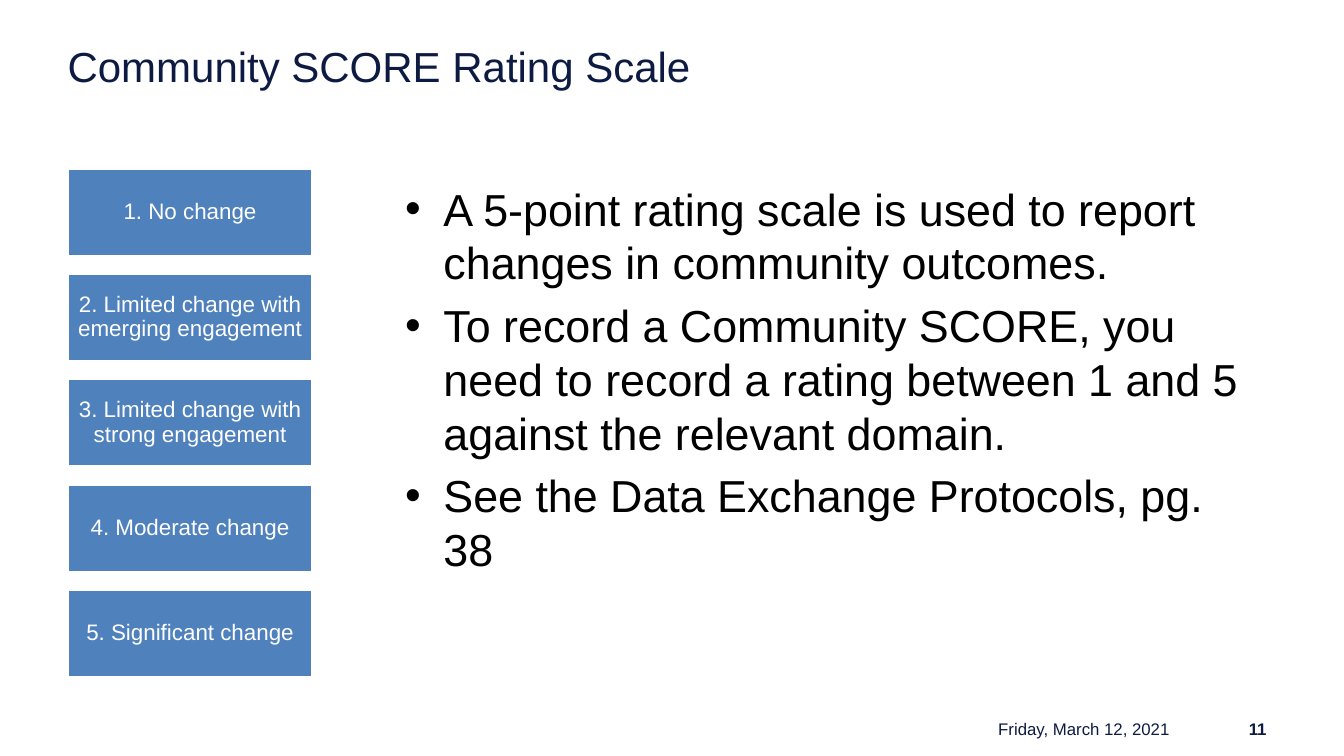
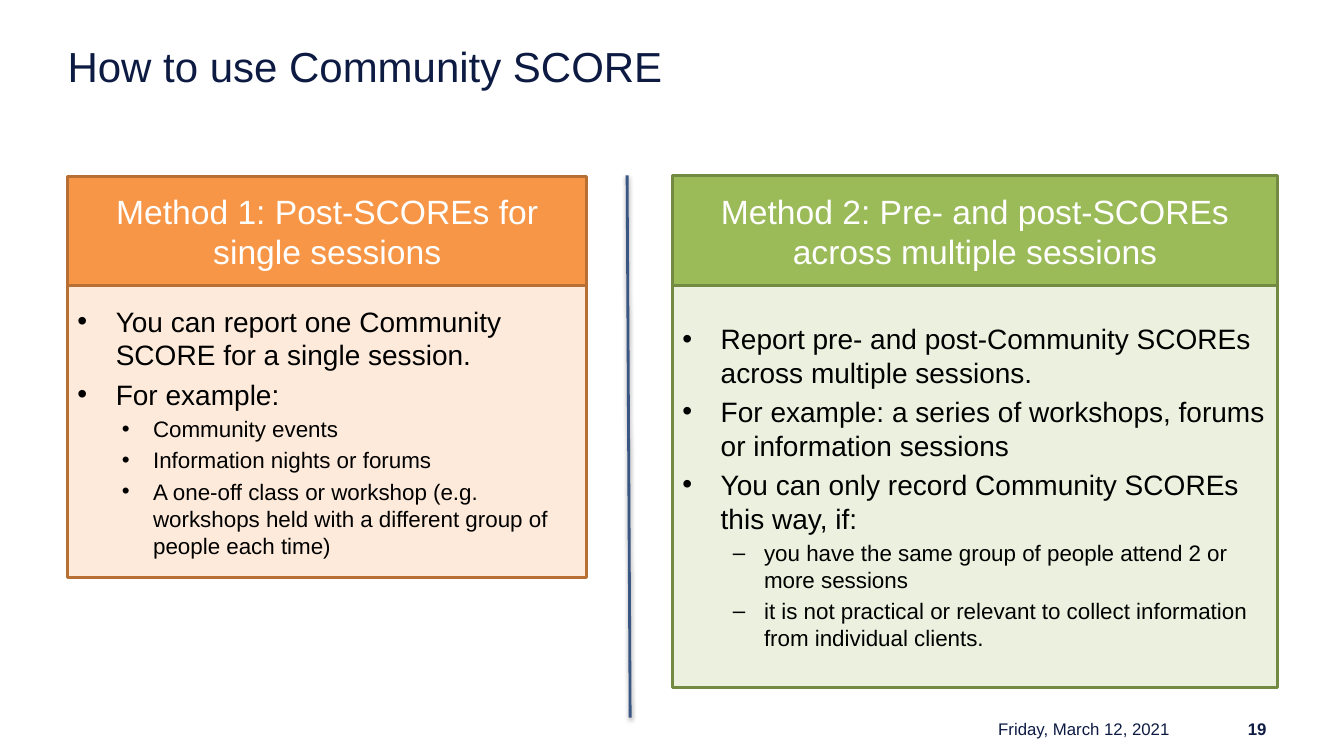
"""Build two slides on the Community SCORE rating scale and its use."""
from dataclasses import dataclass

import lxml.etree
import pptx
import pptx.dml.color
import pptx.enum.shapes
import pptx.enum.text
import pptx.oxml.ns
import pptx.util

Inches = pptx.util.Inches
Pt = pptx.util.Pt
ALIGN = pptx.enum.text.PP_ALIGN
ANCHOR = pptx.enum.text.MSO_ANCHOR

FONT = "Arial"
NAVY = "0D1B43"
WHITE = "FFFFFF"
BLACK = "000000"
BLUE = "4F81BD"
DIVIDER_BLUE = "3A5683"

MARGIN = 0.67
FOOTER_TOP = 7.12
FOOTER_HEIGHT = 0.23
DATE = "Friday, March 12, 2021"

RATINGS = (
    "1. No change",
    "2. Limited change with emerging engagement",
    "3. Limited change with strong engagement",
    "4. Moderate change",
    "5. Significant change",
)
RATING_TOP, RATING_BOTTOM, RATING_HEIGHT = 1.67, 6.72, 0.87


@dataclass(frozen=True)
class Box:
    left: float
    top: float
    width: float
    height: float


@dataclass(frozen=True)
class Style:
    size: float
    color: str
    bold: bool = False
    align: ALIGN = ALIGN.LEFT
    anchor: ANCHOR = ANCHOR.TOP
    inset_x: float = 0.1
    inset_y: float = 0.05
    line_spacing: float = 1.0


@dataclass(frozen=True)
class Bullet:
    text: str
    size: float
    margin: float = 0.38
    hanging: float = 0.38
    mark: str = "•"
    level: int = 0


@dataclass(frozen=True)
class Method:
    heading: str
    heading_box: Box
    details_box: Box
    fill: str
    tint: str
    border: str
    details: tuple[Bullet, ...]


TITLE = Style(30, NAVY, inset_x=0, inset_y=0)
FOOTER = Style(12, NAVY, align=ALIGN.RIGHT, anchor=ANCHOR.MIDDLE)
PAGE_NUMBER = Style(12, NAVY, bold=True, align=ALIGN.RIGHT, anchor=ANCHOR.MIDDLE)
RATING = Style(16, WHITE, align=ALIGN.CENTER, anchor=ANCHOR.MIDDLE,
               inset_x=0.05, line_spacing=0.9)
HEADING = Style(24, WHITE, align=ALIGN.CENTER, anchor=ANCHOR.MIDDLE)

SCALE_NOTES = (
    Bullet("A 5-point rating scale is used to report changes in community outcomes.", 32),
    Bullet("To record a Community SCORE, you need to record a rating between 1 and 5 "
           "against the relevant domain.", 32),
    Bullet("See the Data Exchange Protocols, pg. 38", 32),
)


def example(text: str) -> Bullet:
    """Return a second-level bullet for an example."""
    return Bullet(text, 16, 0.75, 0.31, level=1)


def condition(text: str) -> Bullet:
    """Return a second-level dash for a condition."""
    return Bullet(text, 16, 0.81, 0.31, "–", 1)


METHODS = (
    Method(
        "Method 1: Post-SCOREs for single sessions",
        Box(MARGIN, 1.75, 5.15, 1.08), Box(MARGIN, 2.83, 5.15, 2.9),
        "F79646", "FDEADA", "B76F34",
        (
            Bullet("You can report one Community SCORE for a single session.", 20),
            Bullet("For example:", 20),
            example("Community events"),
            example("Information nights or forums"),
            example("A one-off class or workshop (e.g. workshops held with a different "
                    "group of people each time)"),
        ),
    ),
    Method(
        "Method 2: Pre- and post-SCOREs across multiple sessions",
        Box(6.67, 1.74, 6, 1.1), Box(6.67, 2.83, 6, 3.99),
        "9BBB59", "EBF1DE", "738A42",
        (
            Bullet("Report pre- and post-Community SCOREs across multiple sessions.", 20),
            Bullet("For example: a series of workshops, forums or information sessions", 20),
            Bullet("You can only record Community SCOREs this way, if:", 20),
            condition("you have the same group of people attend 2 or more sessions"),
            condition("it is not practical or relevant to collect information from "
                      "individual clients."),
        ),
    ),
)


def rgb(color: str) -> pptx.dml.color.RGBColor:
    """Turn a hex string into a colour."""
    return pptx.dml.color.RGBColor.from_string(color)


def place(box: Box) -> tuple[int, int, int, int]:
    """Return the position and size of a box as lengths."""
    return Inches(box.left), Inches(box.top), Inches(box.width), Inches(box.height)


def format_runs(paragraph, size: float, color: str, bold: bool = False) -> None:
    """Set the font of every run in a paragraph."""
    for run in paragraph.runs:
        run.font.name = FONT
        run.font.size = Pt(size)
        run.font.bold = bold
        run.font.color.rgb = rgb(color)


def write(shape, text: str, style: Style) -> None:
    """Put one styled paragraph in a shape."""
    frame = shape.text_frame
    frame.word_wrap = True
    frame.vertical_anchor = style.anchor
    frame.margin_left = frame.margin_right = Inches(style.inset_x)
    frame.margin_top = frame.margin_bottom = Inches(style.inset_y)
    frame.text = text
    paragraph = frame.paragraphs[0]
    paragraph.alignment = style.align
    paragraph.line_spacing = style.line_spacing
    format_runs(paragraph, style.size, style.color, style.bold)


def write_bullets(shape, bullets: tuple[Bullet, ...], anchor: ANCHOR) -> None:
    """Fill a shape with a bulleted list."""
    frame = shape.text_frame
    frame.word_wrap = True
    frame.vertical_anchor = anchor
    for index, bullet in enumerate(bullets):
        paragraph = frame.add_paragraph() if index else frame.paragraphs[0]
        paragraph.text = bullet.text
        paragraph.level = bullet.level
        paragraph.alignment = ALIGN.LEFT
        paragraph.space_before = Pt(round(bullet.size * 0.2, 1) if index else 0)
        properties = paragraph._p.get_or_add_pPr()
        properties.set("marL", str(Inches(bullet.margin)))
        properties.set("indent", str(-Inches(bullet.hanging)))
        typeface = lxml.etree.SubElement(properties, pptx.oxml.ns.qn("a:buFont"))
        typeface.set("typeface", FONT)
        mark = lxml.etree.SubElement(properties, pptx.oxml.ns.qn("a:buChar"))
        mark.set("char", bullet.mark)
        format_runs(paragraph, bullet.size, BLACK)


def add_text(slide, box: Box, text: str, style: Style) -> None:
    """Add a text box with one styled paragraph."""
    write(slide.shapes.add_textbox(*place(box)), text, style)


def add_panel(slide, box: Box, fill: str, border: str):
    """Add a filled and outlined rectangle."""
    panel = slide.shapes.add_shape(
        pptx.enum.shapes.MSO_SHAPE.RECTANGLE, *place(box))
    panel.shadow.inherit = False
    panel.fill.solid()
    panel.fill.fore_color.rgb = rgb(fill)
    panel.line.color.rgb = rgb(border)
    panel.line.width = Pt(2)
    return panel


def add_divider(slide) -> None:
    """Add the softly shadowed line between the two methods."""
    divider = slide.shapes.add_connector(
        pptx.enum.shapes.MSO_CONNECTOR.STRAIGHT,
        Inches(6.22), Inches(1.74), Inches(6.25), Inches(7.12))
    divider.line.color.rgb = rgb(DIVIDER_BLUE)
    divider.line.width = Pt(2)
    qn = pptx.oxml.ns.qn
    effects = lxml.etree.SubElement(divider._element.spPr, qn("a:effectLst"))
    shadow = lxml.etree.SubElement(
        effects, qn("a:outerShdw"), blurRad=str(Pt(3.1)), dist=str(Pt(1.6)),
        dir="5400000", rotWithShape="0")
    tone = lxml.etree.SubElement(shadow, qn("a:srgbClr"), val=BLACK)
    lxml.etree.SubElement(tone, qn("a:alpha"), val="38000")


def add_slide(deck, title: str, number: int):
    """Add a slide with its title, page number and date."""
    slide = deck.slides.add_slide(deck.slide_layouts[6])
    add_text(slide, Box(MARGIN, 0.4, 12, 0.66), title, TITLE)
    add_text(slide, Box(11.57, FOOTER_TOP, 1.09, FOOTER_HEIGHT), str(number), PAGE_NUMBER)
    add_text(slide, Box(8.59, FOOTER_TOP, 3.11, FOOTER_HEIGHT), DATE, FOOTER)
    return slide


def build_rating_scale(deck) -> None:
    """Build the slide with the five ratings."""
    slide = add_slide(deck, "Community SCORE Rating Scale", 11)
    step = (RATING_BOTTOM - RATING_TOP - RATING_HEIGHT) / (len(RATINGS) - 1)
    for index, rating in enumerate(RATINGS):
        box = Box(MARGIN, RATING_TOP + index * step, 2.43, RATING_HEIGHT)
        write(add_panel(slide, box, BLUE, WHITE), rating, RATING)
    notes = slide.shapes.add_textbox(*place(Box(3.92, 1.75, 8.53, 4.95)))
    write_bullets(notes, SCALE_NOTES, ANCHOR.TOP)


def build_methods(deck) -> None:
    """Build the slide that compares the two methods."""
    slide = add_slide(deck, "How to use Community SCORE", 19)
    for method in METHODS:
        heading = add_panel(slide, method.heading_box, method.fill, method.border)
        write(heading, method.heading, HEADING)
        details = add_panel(slide, method.details_box, method.tint, method.border)
        write_bullets(details, method.details, ANCHOR.MIDDLE)
    add_divider(slide)


def main() -> None:
    """Build and save the presentation."""
    deck = pptx.Presentation()
    deck.slide_width = Inches(13.33)
    deck.slide_height = Inches(7.5)
    build_rating_scale(deck)
    build_methods(deck)
    deck.save("out.pptx")


if __name__ == "__main__":
    main()
